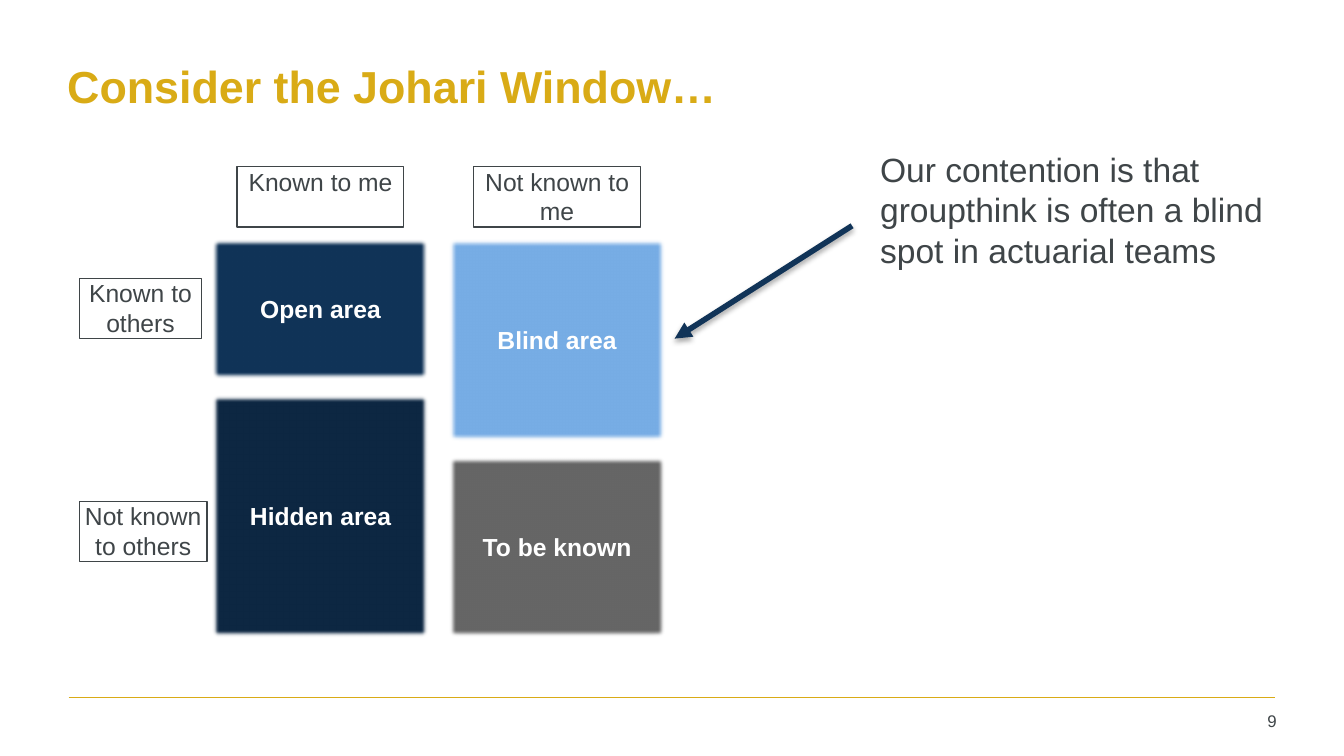
from lxml import etree
from pptx import Presentation
from pptx.dml.color import RGBColor
from pptx.enum import shapes, text
from pptx.oxml import ns
from pptx.util import Inches, Pt

GOLD, NAVY, GREY, WHITE = "D9AB16", "113458", "3F4548", "FFFFFF"

TITLE = "Consider the Johari Window…"
CONTENTION = "Our contention is that groupthink is often a blind spot in actuarial teams"
PAGE_NUMBER = "9"

# Each column: heading, then panes from top to bottom (name, height, fill)
COLUMNS = [
    ("Known to me", [("Open area", 1.06, NAVY), ("Hidden area", 1.82, "0D2742")]),
    ("Not known to me", [("Blind area", 1.52, "77ADE5"), ("To be known", 1.36, "666666")]),
]
# Row headings: text, top, width
ROWS = [("Known to others", 2.07, 0.91), ("Not known to others", 3.73, 0.95)]

GRID_LEFT, GRID_TOP, PANE_WIDTH, COLUMN_PITCH, PANE_GAP = 1.57, 1.77, 1.63, 1.76, 0.1
HEADING_WIDTH, HEADING_HEIGHT, HEADING_TOP, ROW_LEFT = 1.24, 0.45, 1.24, 0.59


def rgb(colour):
    return RGBColor.from_string(colour)


def write(shape, wording, size, colour, bold=False, align=text.PP_ALIGN.LEFT,
          anchor=text.MSO_ANCHOR.TOP, insets=(0.07, 0.04)):
    frame = shape.text_frame
    frame.word_wrap = True
    frame.vertical_anchor = anchor
    frame.margin_left = frame.margin_right = Inches(insets[0])
    frame.margin_top = frame.margin_bottom = Inches(insets[1])
    frame.text = wording
    paragraph = frame.paragraphs[0]
    paragraph.alignment = align
    font = paragraph.runs[0].font
    font.name, font.size, font.bold = "Arial", Pt(size), bold
    font.color.rgb = rgb(colour)


def add_text(slide, box, wording, size, colour, **style):
    write(slide.shapes.add_textbox(*map(Inches, box)), wording, size, colour, **style)


def add_effect(shape, tag, **attributes):
    """Replace the shape's effects with the one named, and return it."""
    properties = shape._element.spPr
    for old in properties.findall(ns.qn("a:effectLst")):
        properties.remove(old)
    effects = etree.SubElement(properties, ns.qn("a:effectLst"))
    return etree.SubElement(effects, ns.qn(tag), attributes)


def add_rectangle(slide, box):
    rectangle = slide.shapes.add_shape(shapes.MSO_SHAPE.RECTANGLE, *map(Inches, box))
    rectangle.shadow.inherit = False
    return rectangle


def add_pane(slide, box, name, fill):
    pane = add_rectangle(slide, box)
    pane.fill.solid()
    pane.fill.fore_color.rgb = rgb(fill)
    pane.line.fill.background()
    add_effect(pane, "a:softEdge", rad=str(Pt(2.5)))
    write(pane, name, 13.2, WHITE, bold=True, align=text.PP_ALIGN.CENTER,
          anchor=text.MSO_ANCHOR.MIDDLE, insets=(0.07, 0.03))


def add_heading(slide, box, wording):
    heading = add_rectangle(slide, box)
    heading.fill.background()
    heading.line.color.rgb = rgb(GREY)
    heading.line.width = Pt(0.75)
    write(heading, wording, 13.2, GREY, align=text.PP_ALIGN.CENTER, insets=(0, 0))


def add_line(slide, ends, colour, width):
    line = slide.shapes.add_connector(shapes.MSO_CONNECTOR.STRAIGHT, *map(Inches, ends))
    line.line.color.rgb = rgb(colour)
    line.line.width = Pt(width)
    return line


def add_window(slide):
    for column, (heading, panes) in enumerate(COLUMNS):
        left, top = GRID_LEFT + column * COLUMN_PITCH, GRID_TOP
        for name, height, fill in panes:
            add_pane(slide, (left, top, PANE_WIDTH, height), name, fill)
            top += height + PANE_GAP
        heading_left = left + (PANE_WIDTH - HEADING_WIDTH) / 2
        add_heading(slide, (heading_left, HEADING_TOP, HEADING_WIDTH, HEADING_HEIGHT), heading)
    for heading, top, width in ROWS:
        add_heading(slide, (ROW_LEFT, top, width, HEADING_HEIGHT), heading)


def add_arrow(slide):
    arrow = add_line(slide, (6.34, 1.68, 5.02, 2.52), NAVY, 3)
    etree.SubElement(arrow.line._get_or_add_ln(), ns.qn("a:tailEnd"), type="triangle")
    shadow = add_effect(arrow, "a:outerShdw", blurRad=str(Pt(3.1)), dist=str(Pt(1.8)),
                        dir="5400000", rotWithShape="0")
    black = etree.SubElement(shadow, ns.qn("a:srgbClr"), val="000000")
    etree.SubElement(black, ns.qn("a:alpha"), val="35000")


def main():
    deck = Presentation()
    deck.slide_width = Inches(10)
    deck.slide_height = Inches(10 * 9 / 16)
    slide = deck.slides.add_slide(deck.slide_layouts[6])

    rule = add_line(slide, (0.51, 5.19, 9.49, 5.19), GOLD, 1)
    etree.SubElement(rule._element.spPr, ns.qn("a:effectLst"))
    add_text(slide, (0.43, 0.17, 9.07, 0.94), TITLE, 24, GOLD, bold=True,
             anchor=text.MSO_ANCHOR.MIDDLE)
    add_text(slide, (8.86, 5.25, 0.71, 0.28), PAGE_NUMBER, 9, GREY,
             align=text.PP_ALIGN.RIGHT)
    add_window(slide)
    add_arrow(slide)
    add_text(slide, (6.45, 1.06, 3.31, 1.01), CONTENTION, 18, GREY, insets=(0.1, 0.05))
    deck.save("out.pptx")


if __name__ == "__main__":
    main()
